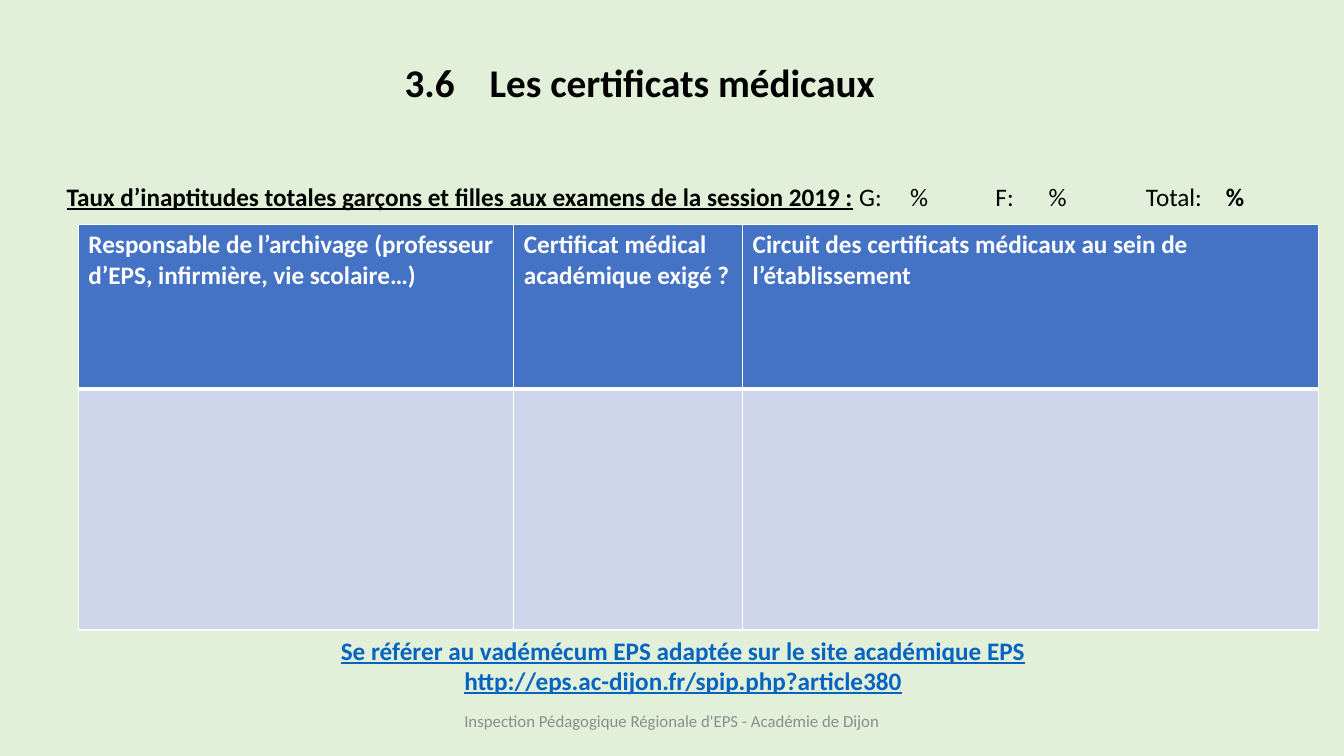
from pptx import Presentation
from pptx.dml.color import RGBColor
from pptx.enum.text import MSO_ANCHOR, PP_ALIGN
from pptx.oxml.ns import qn
from pptx.util import Pt
from lxml import etree

LEFT, CENTER = PP_ALIGN.LEFT, PP_ALIGN.CENTER
TOP, MIDDLE = MSO_ANCHOR.TOP, MSO_ANCHOR.MIDDLE

PALE_GREEN = RGBColor(0xE2, 0xF0, 0xD9)
BLACK = RGBColor(0x00, 0x00, 0x00)
WHITE = RGBColor(0xFF, 0xFF, 0xFF)
HEADER_BLUE = RGBColor(0x44, 0x72, 0xC4)
BODY_BLUE = RGBColor(0xCF, 0xD5, 0xEA)
LINK_BLUE = RGBColor(0x05, 0x63, 0xC1)
GREY = RGBColor(0x8C, 0x8C, 0x8C)


class SlideBuilder:
    font = "Calibri"

    def __init__(self, page, background):
        self.page = page
        page.background.fill.solid()
        page.background.fill.fore_color.rgb = background

    def style(self, span, size, color, bold=False, underline=False):
        span.font.name = self.font
        span.font.size = Pt(size)
        span.font.color.rgb = color
        span.font.bold = bold
        span.font.underline = underline

    def text(self, left, top, width, height, lines, size, color,
             align=LEFT, anchor=TOP, tabs=()):
        box = self.page.shapes.add_textbox(Pt(left), Pt(top), Pt(width), Pt(height))
        frame = box.text_frame
        frame.word_wrap = True
        frame.vertical_anchor = anchor
        frame.text = "\n".join("" for _ in lines)
        for para, spans in zip(frame.paragraphs, lines):
            para.alignment = align
            self.tab_stops(para, tabs)
            for words, bold, underline in spans:
                span = para.add_run()
                span.text = words
                self.style(span, size, color, bold, underline)

    def tab_stops(self, para, tabs):
        if tabs:
            stops = etree.SubElement(para._p.get_or_add_pPr(), qn("a:tabLst"))
            for position in tabs:
                etree.SubElement(stops, qn("a:tab"), pos=str(Pt(position)), algn="l")

    def borders(self, cell, widths):
        properties = cell._tc.get_or_add_tcPr()
        for index, (side, width) in enumerate(zip("LRTB", widths)):
            line = etree.Element(qn(f"a:ln{side}"), w=str(Pt(width)))
            fill = etree.SubElement(line, qn("a:solidFill"))
            etree.SubElement(fill, qn("a:srgbClr"), val=str(WHITE))
            properties.insert(index, line)

    def table(self, left, top, columns, heights, headings, size):
        table = self.page.shapes.add_table(
            len(heights), len(columns), Pt(left), Pt(top),
            Pt(sum(columns)), Pt(sum(heights))).table
        table.horz_banding = False
        for column, width in zip(table.columns, columns):
            column.width = Pt(width)
        for row, height in zip(table.rows, heights):
            row.height = Pt(height)
        for cell, heading in zip(table.rows[0].cells, headings):
            cell.text = heading
            self.style(cell.text_frame.paragraphs[0].runs[0], size, WHITE, bold=True)
        looks = ((HEADER_BLUE, (1, 1, 1, 3)), (BODY_BLUE, (1, 1, 3, 1)))
        for row, (color, widths) in zip(table.rows, looks):
            for cell in row.cells:
                cell.fill.solid()
                cell.fill.fore_color.rgb = color
                self.borders(cell, widths)


def main():
    deck = Presentation()
    deck.slide_width, deck.slide_height = Pt(960), Pt(540)
    slide = SlideBuilder(deck.slides.add_slide(deck.slide_layouts[6]), PALE_GREEN)

    slide.text(282, 38, 369, 104, [[("3.6\tLes certificats médicaux", True, False)]],
               28, BLACK, tabs=(60.7,))
    slide.table(56, 160.5, (311, 163.5, 411.5), (117.5, 172), (
        "Responsable de l’archivage (professeur d’EPS, infirmière, vie scolaire…)",
        "Certificat médical académique exigé ?",
        "Circuit des certificats médicaux au sein de l’établissement"), 18)
    slide.text(40.5, 126, 895, 29, [[
        ("Taux d’inaptitudes totales garçons et filles aux examens de la session 2019 :",
         True, True),
        (" G:\t%\tF:\t%\tTotal:\t", False, False),
        ("%", True, False)]],
        18, BLACK, tabs=(602.5, 663.5, 701.5, 771, 828))
    slide.text(318, 500.5, 324, 29,
               [[("Inspection Pédagogique Régionale d'EPS - Académie de Dijon", False, False)]],
               12, GREY, CENTER, MIDDLE)
    slide.text(76, 450, 824, 51, [
        [("Se référer au vadémécum EPS adaptée sur le site académique EPS", True, True)],
        [("http://eps.ac-dijon.fr/spip.php?article380", True, True)]],
        18, LINK_BLUE, CENTER)

    deck.save("out.pptx")


if __name__ == "__main__":
    main()
